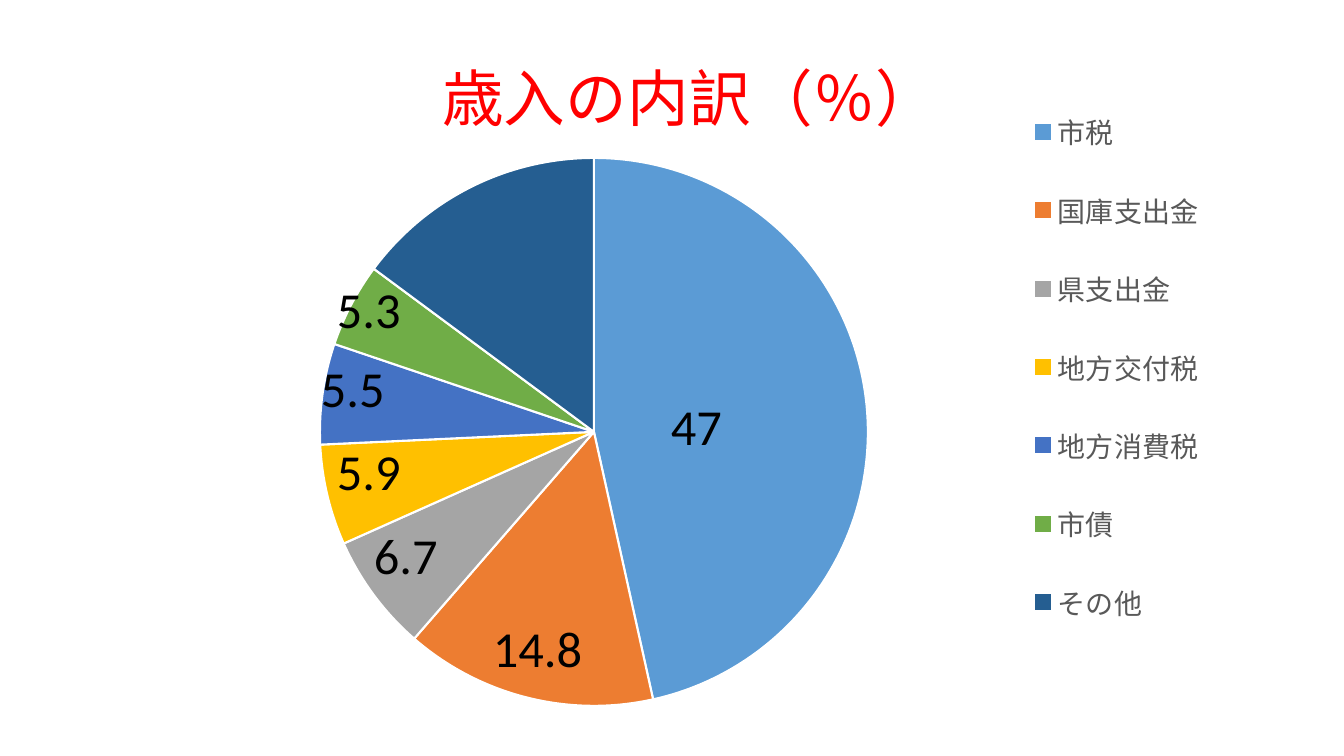
from lxml import etree
from pptx import Presentation
from pptx import util as u
from pptx.chart.data import CategoryChartData
from pptx.dml.color import RGBColor
from pptx.enum import chart as ch
from pptx.enum import text

# Content: source of revenue, rounded share, colour, label, label box (left, top, width) in px
TITLE = "歳入の内訳（％）"
REVENUES = [
    ("市税", 47, "5B9BD5", "47", (661, 390, 109)),
    ("国庫支出金", 15, "ED7D31", "14.8", (483, 612, 142)),
    ("県支出金", 7, "A5A5A5", "6.7", (364, 519, 119)),
    ("地方交付税", 6, "FFC000", "5.9", (327, 435, 101)),
    ("地方消費税", 6, "4472C4", "5.5", (311, 352, 104)),
    ("市債", 5, "70AD47", "5.3", (327, 273, 101)),
    ("その他", 15, "255E91", None, None),
]

# Geometry in px
SLIDE = (1344, 756)
CHART = (147, 26, 1085, 695)
PIE = (320, 158, 548, 548)
LEGEND = (1025, 74, 184, 586)
TITLE_AT = (431, 32)
LABEL_HEIGHT = 72

THEME = {
    "title": {"name": "Calibri", "size": u.Pt(44), "bold": False, "color": "FF0000"},
    "legend": {"name": "Calibri", "size": u.Pt(20), "bold": False, "color": "595959"},
    "label": {"name": "Calibri", "size": u.Pt(36), "bold": False, "color": "000000"},
    "edge": "FFFFFF",
}


def px(n):
    return u.Emu(n * 9525 * 20 // 21)


def style(font, role):
    for key, value in THEME[role].items():
        if key == "color":
            font.color.rgb = RGBColor.from_string(value)
        else:
            setattr(font, key, value)


def place(part, index, box, inner=False):
    """Fix a chart part at a px box, as fractions of the chart frame."""
    ns = "http://schemas.openxmlformats.org/drawingml/2006/chart"
    for old in part.findall(f"{{{ns}}}layout"):
        part.remove(old)
    layout = etree.Element(f"{{{ns}}}layout")
    manual = etree.SubElement(layout, f"{{{ns}}}manualLayout")
    left, top, width, height = CHART
    fractions = zip("xywh", box, (left, top, 0, 0), (width, height) * 2)
    settings = [("layoutTarget", "inner")] if inner else []
    settings += [("xMode", "edge"), ("yMode", "edge")]
    settings += [(k, f"{(v - start) / full:.4f}") for k, v, start, full in fractions]
    for key, value in settings:
        etree.SubElement(manual, f"{{{ns}}}{key}").set("val", value)
    part.insert(index, layout)


prs = Presentation()
prs.slide_width, prs.slide_height = map(px, SLIDE)
slide = prs.slides.add_slide(prs.slide_layouts[6])

# Pie of revenues
shares = CategoryChartData()
shares.categories = [name for name, *_ in REVENUES]
shares.add_series("歳入", [share for _, share, *_ in REVENUES])
pie = slide.shapes.add_chart(ch.XL_CHART_TYPE.PIE, *map(px, CHART), shares).chart
pie.font.name = "Calibri"
plot = pie.plots[0]
plot.vary_by_categories = True
for i, (_, _, color, *_) in enumerate(REVENUES):
    wedge = plot.series[0].points[i].format
    wedge.fill.solid()
    wedge.fill.fore_color.rgb = RGBColor.from_string(color)
    wedge.line.color.rgb = RGBColor.from_string(THEME["edge"])
    wedge.line.width = u.Pt(1.5)
place(pie._chartSpace.chart.plotArea, 0, PIE, inner=True)

# Title
heading = pie.chart_title.text_frame
heading.text = TITLE
style(heading.paragraphs[0].runs[0].font, "title")
place(pie.chart_title._element, 1, TITLE_AT)

# Legend
pie.has_legend = True
pie.legend.position = ch.XL_LEGEND_POSITION.RIGHT
pie.legend.include_in_layout = False
style(pie.legend.font, "legend")
place(pie.legend._element, 1, LEGEND)

# Share labels
for *_, caption, box in REVENUES:
    if box:
        label = slide.shapes.add_textbox(*map(px, (*box, LABEL_HEIGHT))).text_frame
        label.word_wrap = True
        label.auto_size = text.MSO_AUTO_SIZE.SHAPE_TO_FIT_TEXT
        label.text = caption
        style(label.paragraphs[0].runs[0].font, "label")

prs.save("out.pptx")
